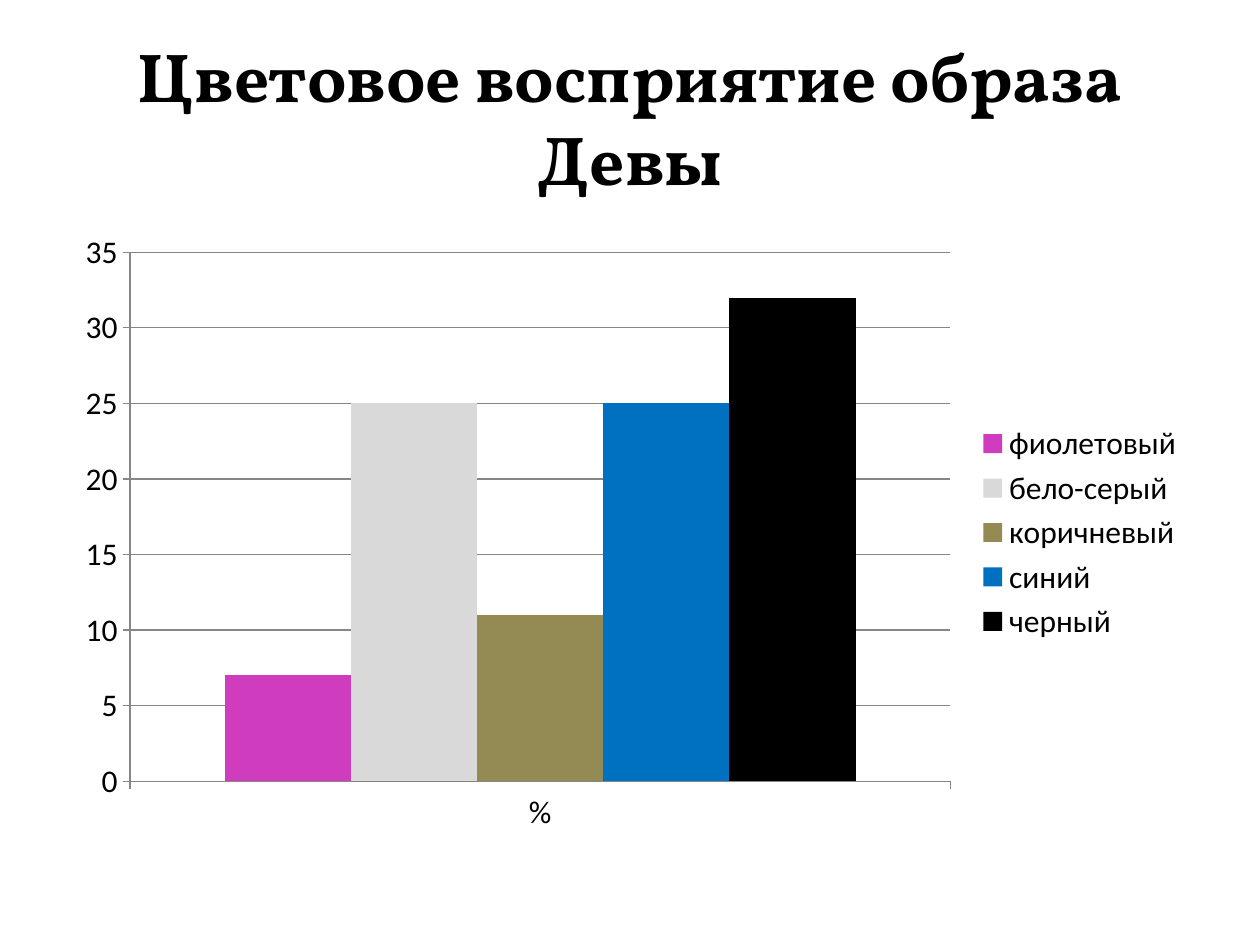
from typing import NamedTuple

from pptx import Presentation
from pptx.chart.data import CategoryChartData
from pptx.dml.color import RGBColor
from pptx.enum.chart import XL_CHART_TYPE as ChartType
from pptx.enum.chart import XL_LEGEND_POSITION as LegendPosition
from pptx.enum.chart import XL_TICK_MARK as TickMark
from pptx.enum.text import MSO_ANCHOR as Anchor
from pptx.enum.text import PP_ALIGN as Align
from pptx.util import Cm, Pt

BLACK = "000000"
AXIS_GREY = "868686"
MARGIN = Cm(1.27)
CONTENT_WIDTH = Cm(22.86)


class ColourShare(NamedTuple):
    name: str
    percent: int
    fill: str


SHARES = [
    ColourShare("фиолетовый", 7, "D03CBE"),
    ColourShare("бело-серый", 25, "D9D9D9"),
    ColourShare("коричневый", 11, "948A54"),
    ColourShare("синий", 25, "0070C0"),
    ColourShare("черный", 32, BLACK),
]


def paint(colour_format, hex_colour: str) -> None:
    colour_format.rgb = RGBColor.from_string(hex_colour)


def draw_line(line, hex_colour: str) -> None:
    paint(line.color, hex_colour)
    line.width = Pt(0.75)


def add_heading(slide, wording: str) -> None:
    frame = slide.shapes.add_textbox(MARGIN, Cm(0.76), CONTENT_WIDTH, Cm(3.18)).text_frame
    frame.word_wrap = True
    frame.vertical_anchor = Anchor.MIDDLE
    paragraph = frame.paragraphs[0]
    paragraph.alignment = Align.CENTER
    run = paragraph.add_run()
    run.text = wording
    run.font.name = "Vollkorn"
    run.font.size = Pt(39.6)
    run.font.bold = True
    paint(run.font.color, BLACK)


def add_share_chart(slide, shares: list[ColourShare]) -> None:
    data = CategoryChartData()
    data.categories = ["%"]
    for share in shares:
        data.add_series(share.name, [share.percent])
    chart = slide.shapes.add_chart(
        ChartType.COLUMN_CLUSTERED, MARGIN, Cm(4.45), CONTENT_WIDTH, Cm(12.57), data
    ).chart

    chart.has_title = False
    chart.font.name = "Calibri"
    chart.font.size = Pt(18)
    paint(chart.font.color, BLACK)

    chart.has_legend = True
    chart.legend.position = LegendPosition.RIGHT
    chart.legend.include_in_layout = False

    for axis in (chart.category_axis, chart.value_axis):
        axis.major_tick_mark = TickMark.OUTSIDE
        axis.minor_tick_mark = TickMark.NONE
        draw_line(axis.format.line, AXIS_GREY)
    percent_axis = chart.value_axis
    percent_axis.minimum_scale = 0
    percent_axis.maximum_scale = 35
    percent_axis.major_unit = 5
    percent_axis.has_major_gridlines = True
    draw_line(percent_axis.major_gridlines.format.line, AXIS_GREY)

    plot = chart.plots[0]
    plot.gap_width = 150
    plot.overlap = 0
    plot.vary_by_categories = False
    for series, share in zip(plot.series, shares):
        series.format.fill.solid()
        paint(series.format.fill.fore_color, share.fill)


def main() -> None:
    deck = Presentation()
    deck.slide_width, deck.slide_height = Cm(25.4), Cm(19.05)
    slide = deck.slides.add_slide(deck.slide_layouts[6])
    add_heading(slide, "Цветовое восприятие образа Девы")
    add_share_chart(slide, SHARES)
    deck.save("out.pptx")


if __name__ == "__main__":
    main()
